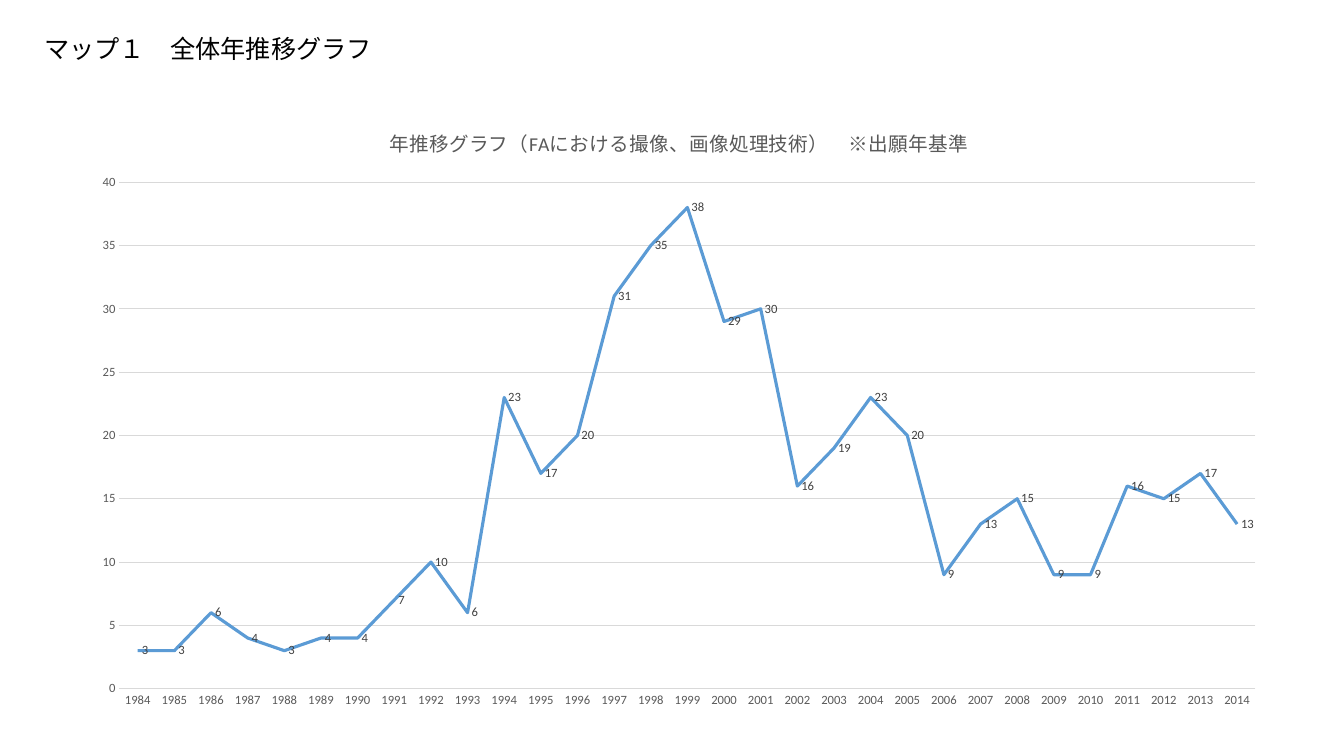
"""Build the slide with the yearly trend of patent applications."""
from pptx import Presentation
from pptx.chart.data import CategoryChartData
from pptx.dml.color import RGBColor
from pptx.enum.chart import XL_CHART_TYPE as ChartType
from pptx.enum.chart import XL_LABEL_POSITION as LabelPosition
from pptx.enum.chart import XL_MARKER_STYLE as MarkerStyle
from pptx.enum.chart import XL_TICK_MARK as TickMark
from pptx.enum.text import MSO_ANCHOR as Anchor
from pptx.enum.text import MSO_AUTO_SIZE as AutoSize
from pptx.enum.text import PP_ALIGN as Align
from pptx.util import Inches, Pt

COLORS = {
    "heading": "000000",
    "muted": "595959",
    "label": "404040",
    "grid": "D9D9D9",
    "trend": "5B9BD5",
}
FIRST_YEAR = 1984
APPLICATIONS = [
    3, 3, 6, 4, 3, 4, 4, 7, 10, 6, 23, 17, 20, 31, 35, 38,
    29, 30, 16, 19, 23, 20, 9, 13, 15, 9, 9, 16, 15, 17, 13,
]


class TrendSlide:
    def __init__(self, deck, typeface):
        self.deck = deck
        self.typeface = typeface
        self.slide = deck.slides.add_slide(deck.slide_layouts[5])

    def area(self, left, top, width, height):
        across, down = self.deck.slide_width, self.deck.slide_height
        shares = (left, across), (top, down), (width, across), (height, down)
        return [round(percent * side / 100) for percent, side in shares]

    def style(self, font, size, color):
        font.name = self.typeface
        font.size = Pt(size)
        font.bold = False
        font.color.rgb = RGBColor.from_string(COLORS[color])

    def rule(self, line, color, width):
        line.color.rgb = RGBColor.from_string(COLORS[color])
        line.width = Pt(width)

    def heading(self, words, place):
        heading = self.slide.shapes.title
        heading.left, heading.top, heading.width, heading.height = self.area(*place)
        frame = heading.text_frame
        frame.word_wrap = False
        frame.auto_size = AutoSize.NONE
        frame.vertical_anchor = Anchor.TOP
        paragraph = frame.paragraphs[0]
        paragraph.alignment = Align.LEFT
        run = paragraph.add_run()
        run.text = words
        self.style(run.font, 18, "heading")

    def axis(self, axis):
        axis.major_tick_mark = axis.minor_tick_mark = TickMark.NONE
        self.style(axis.tick_labels.font, 9, "muted")

    def line_chart(self, caption, years, counts, place):
        data = CategoryChartData()
        data.categories = years
        data.add_series("出願件数", counts)
        chart = self.slide.shapes.add_chart(
            ChartType.LINE, *self.area(*place), data
        ).chart
        self.style(chart.font, 10, "heading")
        chart.has_legend = False
        chart.has_title = True
        chart.chart_title.include_in_layout = False
        run = chart.chart_title.text_frame.paragraphs[0].add_run()
        run.text = caption
        self.style(run.font, 14, "muted")

        self.axis(chart.category_axis)
        self.rule(chart.category_axis.format.line, "grid", 0.75)
        scale = chart.value_axis
        self.axis(scale)
        scale.minimum_scale, scale.maximum_scale, scale.major_unit = 0, 40, 5
        scale.format.line.fill.background()
        scale.has_major_gridlines = True
        self.rule(scale.major_gridlines.format.line, "grid", 0.75)

        chart.plots[0].vary_by_categories = False
        trend = chart.plots[0].series[0]
        trend.smooth = False
        trend.marker.style = MarkerStyle.NONE
        self.rule(trend.format.line, "trend", 2.25)
        labels = trend.data_labels
        labels.show_value = True
        labels.position = LabelPosition.RIGHT
        self.style(labels.font, 9, "label")


def main():
    deck = Presentation()
    deck.slide_width, deck.slide_height = Inches(13.33), Inches(7.5)
    page = TrendSlide(deck, "Calibri")
    years = [str(FIRST_YEAR + offset) for offset in range(len(APPLICATIONS))]
    page.line_chart(
        "年推移グラフ（FAにおける撮像、画像処理技術）　※出願年基準",
        years, APPLICATIONS, (5.85, 13.87, 89.35, 81.33),
    )
    page.heading("マップ１　全体年推移グラフ", (2.55, 3.73, 26.18, 5.33))
    deck.save("out.pptx")


if __name__ == "__main__":
    main()
